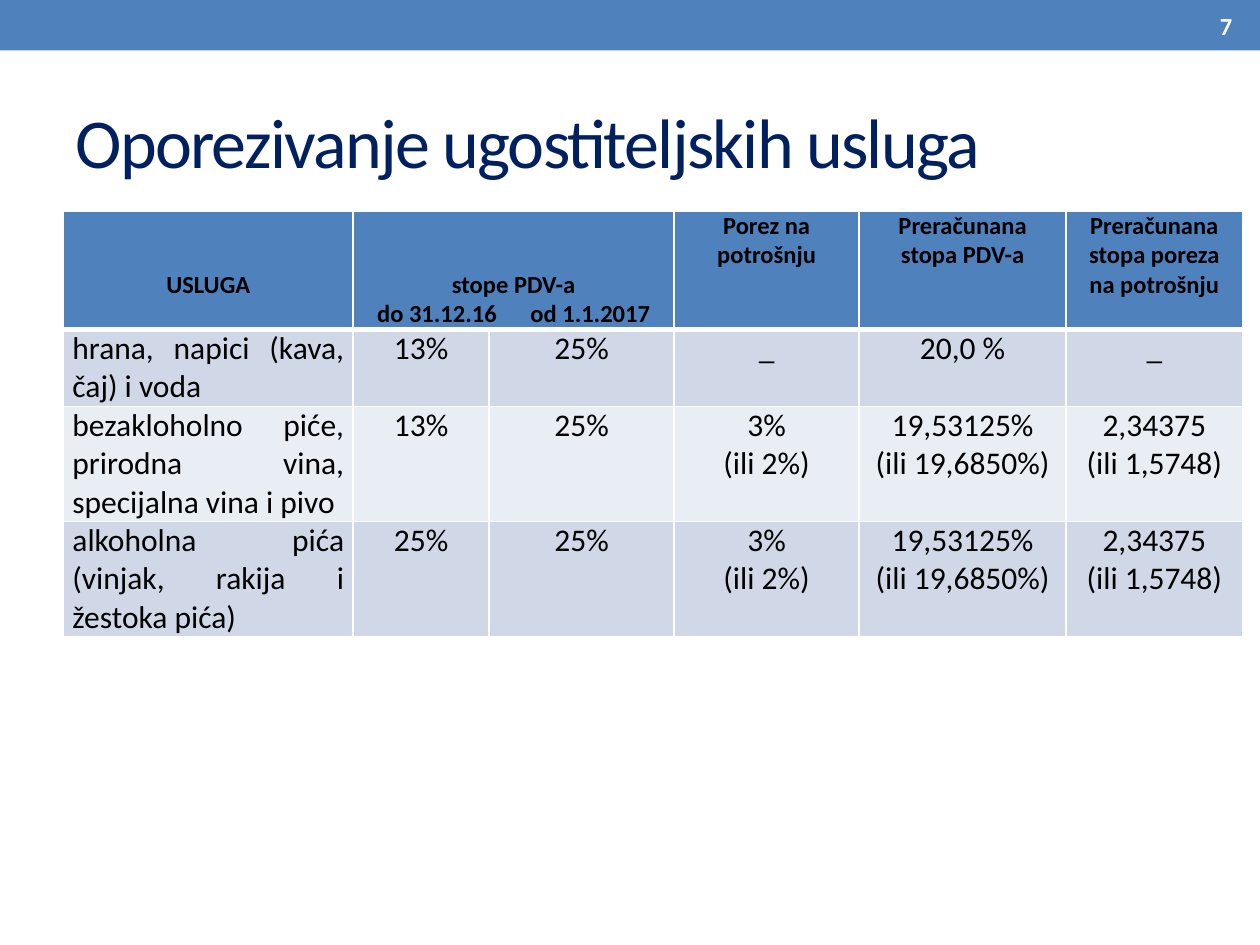
from lxml.etree import SubElement
from pptx import Presentation
from pptx.dml.color import RGBColor
from pptx.enum.shapes import MSO_SHAPE as Shape
from pptx.enum.text import MSO_ANCHOR as Anchor, PP_ALIGN as Align
from pptx.oxml.ns import qn
from pptx.util import Cm, Pt

COLORS = {
    "blue": "4F81BD", "navy": "002060", "black": "000000",
    "white": "FFFFFF", "odd": "D0D8E8", "even": "E9EDF4",
}
FORMATS = {
    "title": {"name": "Calibri", "size": Pt(40), "bold": False},
    "header": {"name": "Calibri", "size": Pt(14), "bold": True},
    "body": {"name": "Calibri", "size": Pt(18), "bold": False},
}
COLUMNS = [5.84, 2.74, 3.73, 3.73, 4.17, 3.56]
ROWS = [2.39, 1.55, 2.32, 2.32]
HEADER = ["USLUGA", "stope PDV-a\n\tdo 31.12.16\tod 1.1.2017", "",
          "Porez na potrošnju", "Preračunana stopa PDV-a",
          "Preračunana stopa poreza na potrošnju"]
DRINK_TAX = ["3%\n(ili 2%)", "19,53125%\n(ili 19,6850%)", "2,34375\n(ili 1,5748)"]
SERVICES = [
    ["hrana, napici (kava, čaj) i voda", "13%", "25%", "_", "20,0 %", "_"],
    ["bezakloholno piće, prirodna vina, specijalna vina i pivo", "13%", "25%", *DRINK_TAX],
    ["alkoholna pića (vinjak, rakija i žestoka pića)", "25%", "25%", *DRINK_TAX],
]


def rgb(color):
    return RGBColor.from_string(COLORS[color])


def write(frame, text, style, color, align):
    frame.word_wrap = True
    frame.text = text
    for paragraph in frame.paragraphs:
        paragraph.alignment = align
        for run in paragraph.runs:
            for attribute, value in FORMATS[style].items():
                setattr(run.font, attribute, value)
            run.font.color.rgb = rgb(color)


def add_top_bar(slide, left, top, width, height):
    bar = slide.shapes.add_shape(Shape.RECTANGLE, Cm(left), Cm(top), Cm(width), Cm(height))
    bar.shadow.inherit = False
    bar.fill.solid()
    bar.fill.fore_color.rgb = rgb("blue")
    bar.line.fill.background()
    number = slide.shapes.add_textbox(
        Cm(left + width - 2.31), Cm(top + 0.05), Cm(2), Cm(height - 0.1))
    number.text_frame.vertical_anchor = Anchor.MIDDLE
    write(number.text_frame, "7", "header", "white", Align.RIGHT)


def place_title(slide, left, top, width, height):
    title = slide.shapes.title
    box = {"left": left, "top": top, "width": width, "height": height}
    for side, length in box.items():
        setattr(title, side, Cm(length))
    title.text_frame.vertical_anchor = Anchor.MIDDLE
    write(title.text_frame, "Oporezivanje ugostiteljskih usluga", "title", "navy", Align.LEFT)
    title.text_frame.paragraphs[0].runs[0].font._element.set("spc", "-100")


def set_borders(cell, widths):
    properties = cell._tc.get_or_add_tcPr()
    for index, (side, width) in enumerate(widths.items()):
        border = properties.makeelement(qn(f"a:{side}"), {"w": str(Pt(width))})
        fill = SubElement(border, qn("a:solidFill"))
        SubElement(fill, qn("a:srgbClr"), val=COLORS["white"])
        properties.insert(index, border)


def set_tabs(paragraph, positions):
    properties = paragraph._p.get_or_add_pPr()
    tabs = SubElement(properties, qn("a:tabLst"))
    for position in positions:
        SubElement(tabs, qn("a:tab"), pos=str(Cm(position)), algn="ctr")


def add_tax_table(slide, left, top, columns, rows):
    table = slide.shapes.add_table(
        len(rows), len(columns), Cm(left), Cm(top), Cm(sum(columns)), Cm(sum(rows))).table
    for column, width in zip(table.columns, columns):
        column.width = Cm(width)
    for row, height in zip(table.rows, rows):
        row.height = Cm(height)
    margins = {"margin_left": Cm(0.18), "margin_right": Cm(0.18),
               "margin_top": 0, "margin_bottom": 0}
    for r, texts in enumerate([HEADER, *SERVICES]):
        fill = "blue" if r == 0 else "odd" if r % 2 else "even"
        for c, text in enumerate(texts):
            cell = table.cell(r, c)
            for side, margin in margins.items():
                setattr(cell, side, margin)
            cell.fill.solid()
            cell.fill.fore_color.rgb = rgb(fill)
            align = Align.JUSTIFY if r and c == 0 else Align.CENTER
            write(cell.text_frame, text, "body" if r else "header", "black", align)
            set_borders(cell, {"lnL": 1, "lnR": 1, "lnT": 3 if r == 1 else 1,
                               "lnB": 1 if r else 3})
    service, rates = table.cell(0, 0), table.cell(0, 1)
    rates.merge(table.cell(0, 2))
    service.vertical_anchor = rates.vertical_anchor = Anchor.BOTTOM
    service.margin_bottom = Cm(0.6)
    periods = rates.text_frame.paragraphs[1]
    periods.alignment = Align.LEFT
    set_tabs(periods, [1.51, 4.6])


def main():
    deck = Presentation()
    deck.slide_width, deck.slide_height = Cm(25.4), Cm(19.05)
    slide = deck.slides.add_slide(deck.slide_layouts[5])
    add_top_bar(slide, 0, 0, 25.4, 1.02)
    place_title(slide, 1.27, 1.47, 22.86, 2.74)
    add_tax_table(slide, 1.28, 4.25, COLUMNS, ROWS)
    deck.save("out.pptx")


if __name__ == "__main__":
    main()
